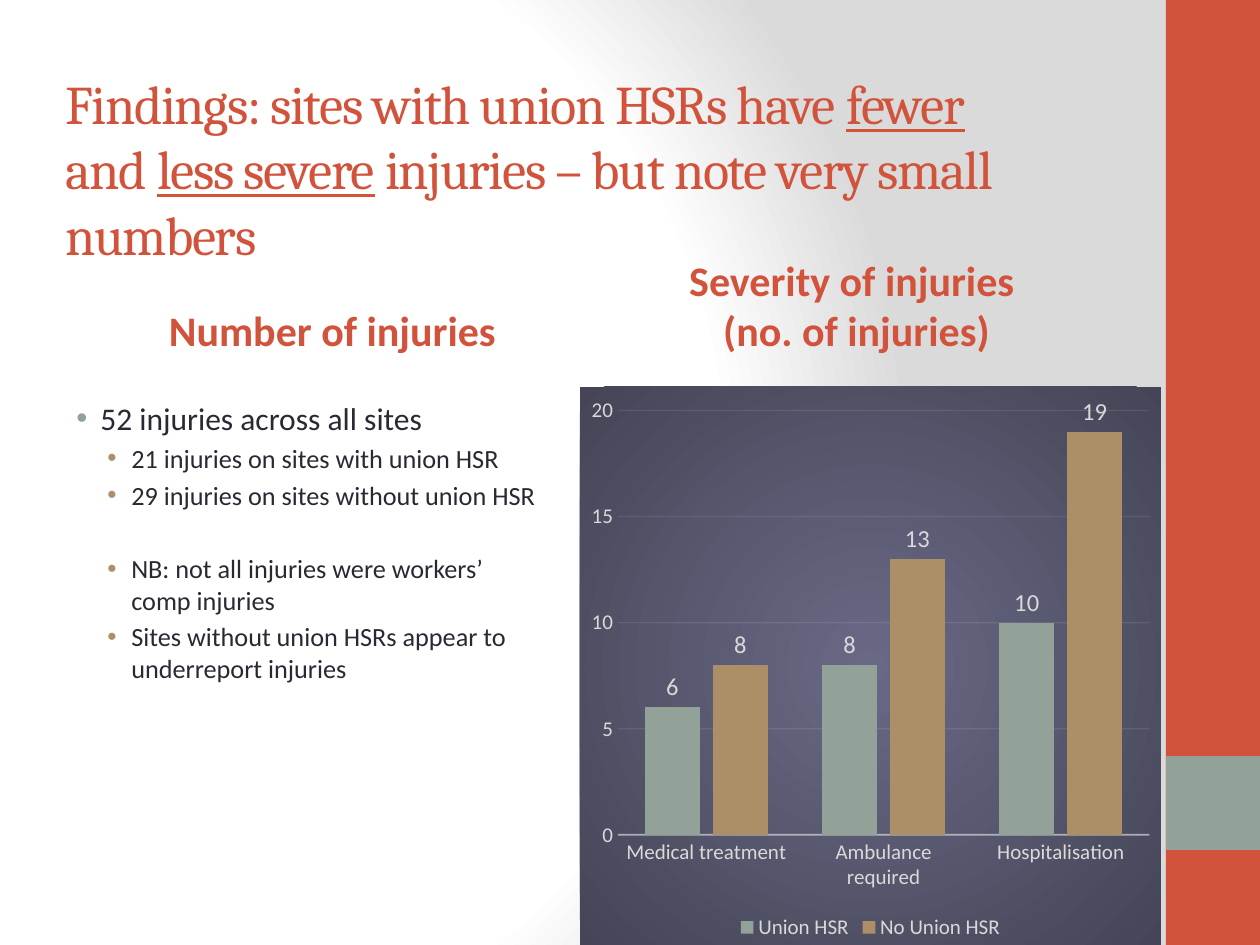
import pptx
import pptx.chart.data
import pptx.dml.color
import pptx.enum.chart
import pptx.enum.shapes
import pptx.enum.text
import pptx.oxml
import pptx.oxml.ns
import pptx.util

EMU_PER_PX = 914400 / 126
RED, SAGE, TAN = "D2533C", "93A299", "AD8F67"
DARK, PALE, GRID = "292934", "D9D9D9", "F2F2F2"
NAMESPACES = pptx.oxml.ns.nsdecls("a", "c")
Align = pptx.enum.text.PP_ALIGN
Anchor = pptx.enum.text.MSO_ANCHOR


def px(value):
    return pptx.util.Emu(round(value * EMU_PER_PX))


def color(value):
    return pptx.dml.color.RGBColor.from_string(value)


def set_font(font, name, size, hex_color, bold=False):
    font.name = name
    font.size = pptx.util.Pt(size)
    font.color.rgb = color(hex_color)
    font.bold = bold


def radial_gradient(stops, left, top, right, bottom):
    stop_xml = "".join(
        f'<a:gs pos="{position * 1000}"><a:srgbClr val="{value}"/></a:gs>'
        for position, value in stops
    )
    return (
        f'<a:gradFill {NAMESPACES} rotWithShape="1"><a:gsLst>{stop_xml}</a:gsLst>'
        f'<a:path path="circle"><a:fillToRect l="{left * 1000}" t="{top * 1000}" '
        f'r="{right * 1000}" b="{bottom * 1000}"/></a:path></a:gradFill>'
    )


def set_background(slide):
    slide.background.fill.solid()
    solid = slide.element.xpath("p:cSld/p:bg/p:bgPr/a:solidFill")[0]
    stops = [(0, "FFFFFF"), (75, "FFFFFF"), (100, "DADADA")]
    gradient = radial_gradient(stops, 20, 50, 100, 50)
    solid.getparent().replace(solid, pptx.oxml.parse_xml(gradient))


def add_block(slide, left, top, width, height, fill):
    shape = slide.shapes.add_shape(
        pptx.enum.shapes.MSO_SHAPE.RECTANGLE, px(left), px(top), px(width), px(height)
    )
    shape.shadow.inherit = False
    shape.fill.solid()
    shape.fill.fore_color.rgb = color(fill)
    shape.line.fill.background()


def add_frame(slide, left, top, width, height, anchor):
    frame = slide.shapes.add_textbox(px(left), px(top), px(width), px(height)).text_frame
    frame.word_wrap = True
    frame.vertical_anchor = anchor
    return frame


def add_paragraphs(frame, count):
    return [frame.paragraphs[0]] + [frame.add_paragraph() for _ in range(count - 1)]


def add_title(slide, parts):
    paragraph = add_frame(slide, 53, 71, 997, 194, Anchor.MIDDLE).paragraphs[0]
    set_font(paragraph.font, "Cambria", 31.1, RED)
    for text, underlined in parts:
        run = paragraph.add_run()
        run.text = text
        run.font.underline = underlined
        run.font._element.set("spc", "-80")


def add_heading(slide, left, width, lines):
    frame = add_frame(slide, left, 265, width, 96, Anchor.BOTTOM)
    for paragraph, text in zip(add_paragraphs(frame, len(lines)), lines):
        paragraph.text = text
        paragraph.alignment = Align.CENTER
        set_font(paragraph.font, "Calibri", 24, RED, True)


def add_bullets(slide, items):
    frame = add_frame(slide, 53, 393, 503, 552, Anchor.TOP)
    for paragraph, (text, level, space) in zip(add_paragraphs(frame, len(items)), items):
        size, margin, bullet_color = [(18, 35, SAGE), (15, 66, TAN)][level]
        paragraph.text = text
        paragraph.level = level
        paragraph.space_before = pptx.util.Pt(space)
        set_font(paragraph.font, "Calibri", size, DARK)
        properties = paragraph._p.get_or_add_pPr()
        properties.set("marL", str(px(margin)))
        properties.set("indent", str(px(-24)))
        bullet = (
            f'<a:buClr {NAMESPACES}><a:srgbClr val="{bullet_color}"/></a:buClr>',
            f'<a:buFont {NAMESPACES} typeface="Arial"/>',
            f'<a:buChar {NAMESPACES} char="•"/>',
        )
        default_font = properties.find(pptx.oxml.ns.qn("a:defRPr"))
        for xml in bullet:
            default_font.addprevious(pptx.oxml.parse_xml(xml))


def set_line(line, width, opacity):
    line.width = pptx.util.Pt(width)
    line.color.rgb = color(GRID)
    fill = line._ln.find(".//" + pptx.oxml.ns.qn("a:srgbClr"))
    fill.append(pptx.oxml.parse_xml(f'<a:alpha {NAMESPACES} val="{opacity * 1000}"/>'))


def style_axes(chart):
    for axis in (chart.category_axis, chart.value_axis):
        axis.major_tick_mark = axis.minor_tick_mark = pptx.enum.chart.XL_TICK_MARK.NONE
        set_font(axis.tick_labels.font, "Calibri", 12, PALE)
    set_line(chart.category_axis.format.line, 1, 54)
    value_axis = chart.value_axis
    value_axis.minimum_scale, value_axis.maximum_scale = 0, 20
    value_axis.major_unit = 5
    value_axis.format.line.fill.background()
    set_line(value_axis.major_gridlines.format.line, 0.75, 10)


def style_series(series, fill):
    series.format.fill.solid()
    series.format.fill.fore_color.rgb = color(fill)
    labels = series.data_labels
    labels.show_value = True
    labels.position = pptx.enum.chart.XL_LABEL_POSITION.OUTSIDE_END
    set_font(labels.font, "Calibri", 14, PALE)


def set_chart_background(chart):
    gradient = radial_gradient([(0, "696986"), (100, "454557")], 50, 50, 50, 50)
    area = f"<c:spPr {NAMESPACES}>{gradient}<a:ln><a:noFill/></a:ln></c:spPr>"
    text_properties = chart.element.find(pptx.oxml.ns.qn("c:txPr"))
    text_properties.addprevious(pptx.oxml.parse_xml(area))


def add_injury_chart(slide):
    data = pptx.chart.data.CategoryChartData()
    data.categories = ["Medical treatment", "Ambulance required", "Hospitalisation"]
    data.add_series("Union HSR", (6, 8, 10))
    data.add_series("No Union HSR", (8, 13, 19))
    chart = slide.shapes.add_chart(
        pptx.enum.chart.XL_CHART_TYPE.COLUMN_CLUSTERED,
        px(580), px(387), px(581), px(558), data,
    ).chart
    set_font(chart.font, "Calibri", 10, DARK)
    set_chart_background(chart)
    chart.has_title = False
    chart.has_legend = True
    chart.legend.position = pptx.enum.chart.XL_LEGEND_POSITION.BOTTOM
    chart.legend.include_in_layout = False
    set_font(chart.legend.font, "Calibri", 12, PALE)
    plot = chart.plots[0]
    plot.vary_by_categories = False
    plot.gap_width = 100
    plot.overlap = -24
    for series, fill in zip(plot.series, (SAGE, TAN)):
        style_series(series, fill)
    style_axes(chart)


def main():
    presentation = pptx.Presentation()
    presentation.slide_width, presentation.slide_height = px(1260), px(945)
    slide = presentation.slides.add_slide(presentation.slide_layouts[6])
    set_background(slide)
    add_block(slide, 1166, 0, 94, 945, RED)
    add_block(slide, 1166, 756, 94, 94, SAGE)
    add_title(slide, [
        ("Findings: sites with union HSRs have ", False),
        ("fewer", True),
        (" and ", False),
        ("less severe", True),
        (" injuries – but note very small numbers", False),
    ])
    add_heading(slide, 54, 557, ["Number of injuries"])
    add_bullets(slide, [
        ("52 injuries across all sites", 0, 3.6),
        ("21 injuries on sites with union HSR", 1, 3),
        ("29 injuries on sites without union HSR", 1, 3),
        ("NB: not all injuries were workers’ comp injuries", 1, 24),
        ("Sites without union HSRs appear to underreport injuries", 1, 3),
    ])
    add_heading(slide, 571, 571, ["Severity of injuries ", "(no. of injuries)"])
    add_injury_chart(slide)
    presentation.save("out.pptx")


if __name__ == "__main__":
    main()
